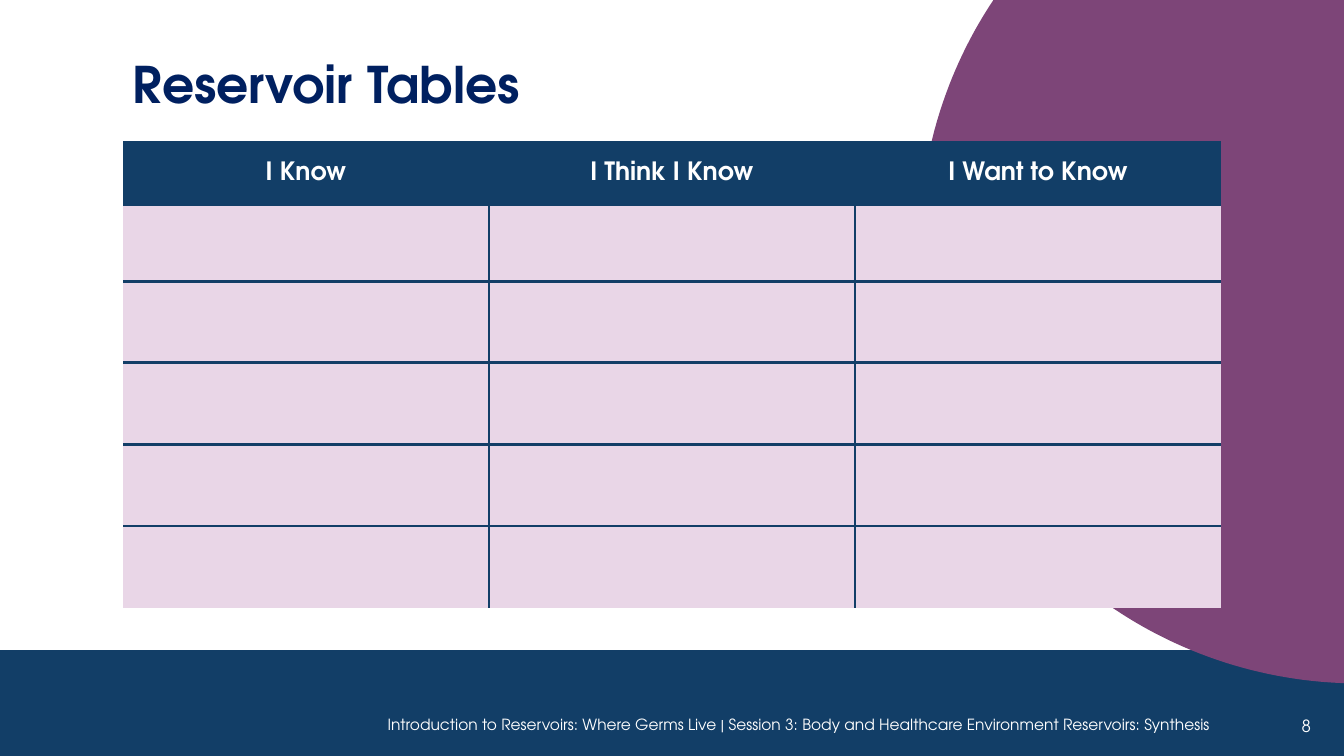
import math
from lxml import etree
from pptx import Presentation
from pptx.dml.color import RGBColor
from pptx.enum import shapes, text
from pptx.oxml.ns import qn
from pptx.util import Inches, Pt

TITLE = "Reservoir Tables"
FOOTER = ("Introduction to Reservoirs: Where Germs Live | "
          "Session 3: Body and Healthcare Environment Reservoirs: Synthesis")
PAGE_NUMBER = "8"
HEADINGS = ["I Know", "I Think I Know", "I Want to Know"]
ROW_HEIGHTS = [0.64, 0.75] + [0.81] * 4
COLUMN_WIDTH = 3.63
FONT = "TeX Gyre Adventor"
COLORS = {"navy": "123E67", "plum": "7D4578", "pink": "E9D6E7",
          "title": "002060", "white": "FFFFFF"}
CIRCLE = {"x": 13.48, "y": 2.42, "radius": 4.36, "right": 14.68}
ARC_STEPS = 120


def paint(fill, color):
    fill.solid()
    fill.fore_color.rgb = RGBColor.from_string(COLORS[color])


def write(frame, content, size, color="white", bold=False, align="LEFT", spacing=None):
    para = frame.paragraphs[0]
    para.alignment = getattr(text.PP_ALIGN, align)
    if spacing:
        para.line_spacing = spacing
    span = para.add_run()
    span.text = content
    span.font.name = FONT
    span.font.size = Pt(size)
    span.font.bold = bold
    span.font.color.rgb = RGBColor.from_string(COLORS[color])


def add_text(page, place, content, size, **style):
    box = page.shapes.add_textbox(*map(Inches, place))
    box.text_frame.word_wrap = True
    box.text_frame.vertical_anchor = text.MSO_ANCHOR.TOP
    write(box.text_frame, content, size, **style)


def flatten(shape, color):
    paint(shape.fill, color)
    shape.line.fill.background()
    shape.shadow.inherit = False


def add_circle(page):
    x, y, radius, right = CIRCLE.values()
    start = math.acos((right - x) / radius)
    end = math.pi + math.asin(y / radius)
    angles = [start + (end - start) * step / ARC_STEPS for step in range(ARC_STEPS + 1)]
    points = [(right, 0)] + [(x + radius * math.cos(angle), y + radius * math.sin(angle))
                             for angle in angles]
    points = [(Inches(across), Inches(down)) for across, down in points]
    builder = page.shapes.build_freeform(*points[0])
    builder.add_line_segments(points[1:], close=True)
    flatten(builder.convert_to_shape(), "plum")


def set_borders(cell, visible):
    properties = cell._tc.get_or_add_tcPr()
    for index, side in enumerate("LRTB"):
        line = etree.Element(qn(f"a:ln{side}"), w=str(Pt(2.25)))
        if side in visible:
            fill = etree.SubElement(line, qn("a:solidFill"))
            etree.SubElement(fill, qn("a:srgbClr"), val=COLORS["navy"])
        else:
            etree.SubElement(line, qn("a:noFill"))
        properties.insert(index, line)


def add_reservoir_table(page):
    rows, columns = len(ROW_HEIGHTS), len(HEADINGS)
    table = page.shapes.add_table(
        rows, columns, Inches(1.22), Inches(1.4),
        Inches(COLUMN_WIDTH * columns), Inches(sum(ROW_HEIGHTS))).table
    for column in table.columns:
        column.width = Inches(COLUMN_WIDTH)
    for row, height in enumerate(ROW_HEIGHTS):
        table.rows[row].height = Inches(height)
        for column, heading in enumerate(HEADINGS):
            cell = table.cell(row, column)
            paint(cell.fill, "pink" if row else "navy")
            inner = {"L": row and column, "R": row and column < columns - 1,
                     "T": row > 1, "B": 0 < row < rows - 1}
            set_borders(cell, [side for side, shown in inner.items() if shown])
            if row == 0:
                cell.vertical_anchor = text.MSO_ANCHOR.MIDDLE
                write(cell.text_frame, heading, 18, bold=True, align="CENTER")


def main():
    deck = Presentation()
    deck.slide_width, deck.slide_height = Inches(13.33), Inches(7.5)
    page = deck.slides.add_slide(deck.slide_layouts[6])
    band = page.shapes.add_shape(shapes.MSO_SHAPE.RECTANGLE, 0, Inches(6.45),
                                 deck.slide_width, Inches(1.05))
    flatten(band, "navy")
    add_text(page, (3.16, 7.05, 8.95, 0.29), FOOTER, 11, align="RIGHT")
    add_text(page, (12.42, 7.05, 0.68, 0.3), PAGE_NUMBER, 12, align="RIGHT")
    add_circle(page)
    add_text(page, (1.22, 0.55, 7.69, 0.77), TITLE, 36,
             color="title", bold=True, spacing=0.9)
    add_reservoir_table(page)
    deck.save("out.pptx")


if __name__ == "__main__":
    main()
